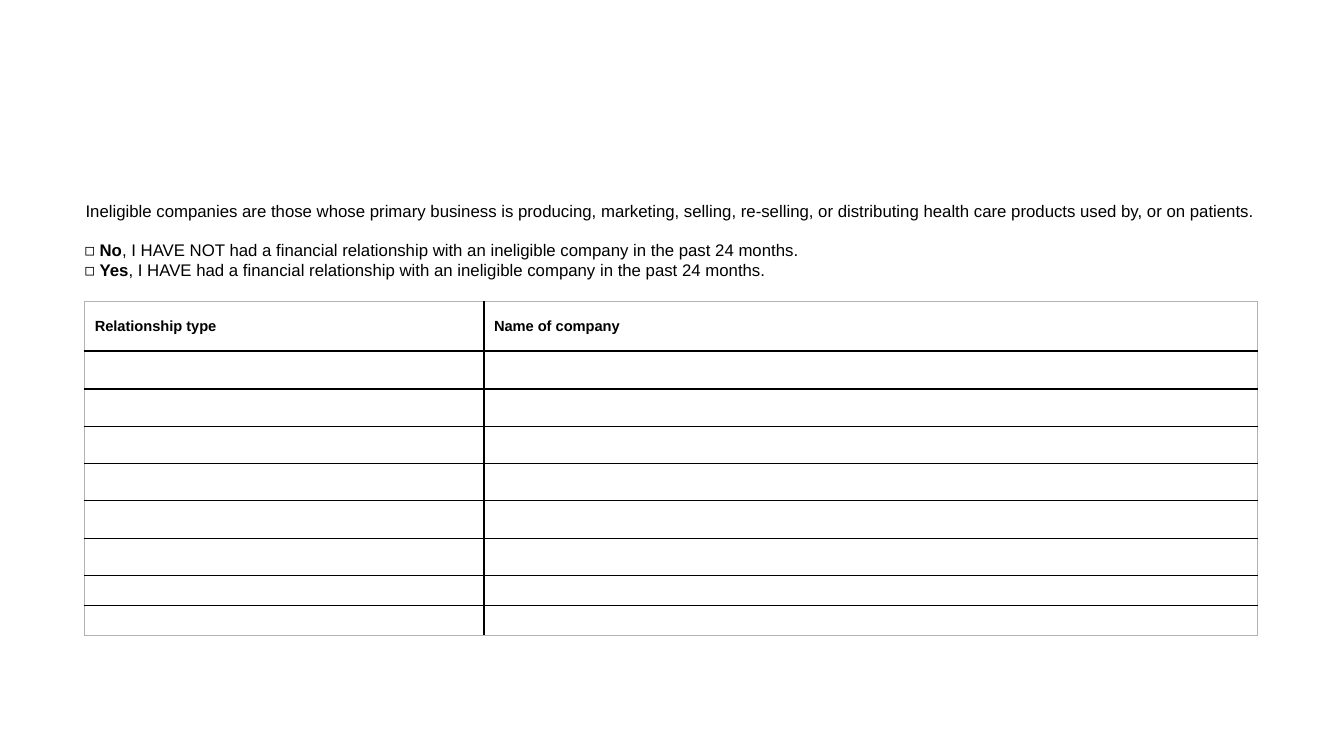
from dataclasses import dataclass

from lxml.etree import SubElement
from pptx import Presentation
from pptx.dml.color import RGBColor
from pptx.enum.text import MSO_ANCHOR, MSO_AUTO_SIZE
from pptx.oxml.ns import qn
from pptx.util import Inches, Pt


@dataclass(frozen=True)
class Theme:
    font: str = "Arial"
    ink: str = "000000"
    paper: str = "FFFFFF"
    frame: str = "B2B2B2"
    body_size: float = 12
    table_size: float = 10.5
    thin: float = 1
    thick: float = 1.5


THEME = Theme()

DEFINITION = [[(
    "Ineligible companies are those whose primary business is producing, marketing, "
    "selling, re-selling, or distributing health care products used by, or on patients.",
    False,
)]]
ANSWERS = [
    [("◻︎ ", False), (answer, True),
     (f", I {verb} had a financial relationship with an ineligible company in the past 24 months.", False)]
    for answer, verb in (("No", "HAVE NOT"), ("Yes", "HAVE"))
]
HEADINGS = ["Relationship type", "Name of company"]
COLUMN_WIDTHS = [3.96, 7.67]
ROW_HEIGHTS = [0.49, 0.38] + [0.37] * 5 + [0.3] * 2


def add_run(paragraph, text, size, bold):
    run = paragraph.add_run()
    run.text = text
    run.font.name = THEME.font
    run.font.size = Pt(size)
    run.font.bold = bold
    run.font.color.rgb = RGBColor.from_string(THEME.ink)


def add_statement(slide, box, lines):
    frame = slide.shapes.add_textbox(*map(Inches, box)).text_frame
    frame.word_wrap = True
    frame.auto_size = MSO_AUTO_SIZE.SHAPE_TO_FIT_TEXT
    for index, runs in enumerate(lines):
        paragraph = frame.add_paragraph() if index else frame.paragraphs[0]
        for text, bold in runs:
            add_run(paragraph, text, THEME.body_size, bold)


def add_border(cell, side, color, width):
    line = SubElement(cell._tc.get_or_add_tcPr(), qn(f"a:{side}"), w=str(Pt(width)))
    fill = SubElement(line, qn("a:solidFill"))
    SubElement(fill, qn("a:srgbClr"), val=color)


def style_cell(cell, row, column):
    last_row, last_column = len(ROW_HEIGHTS) - 1, len(COLUMN_WIDTHS) - 1
    outer = {"lnL": column == 0, "lnR": column == last_column,
             "lnT": row == 0, "lnB": row == last_row}
    under_heading = {"lnT": row == 1, "lnB": row == 0}
    for side, is_outer in outer.items():
        add_border(cell, side, THEME.frame if is_outer else THEME.ink,
                   THEME.thick if under_heading.get(side) else THEME.thin)
    cell.fill.solid()
    cell.fill.fore_color.rgb = RGBColor.from_string(THEME.paper)
    cell.vertical_anchor = MSO_ANCHOR.MIDDLE


def add_relationship_table(slide, left, top):
    table = slide.shapes.add_table(
        len(ROW_HEIGHTS), len(COLUMN_WIDTHS), Inches(left), Inches(top),
        Inches(sum(COLUMN_WIDTHS)), Inches(sum(ROW_HEIGHTS)),
    ).table
    table.horz_banding = False
    for column, width in zip(table.columns, COLUMN_WIDTHS):
        column.width = Inches(width)
    for row_index, (row, height) in enumerate(zip(table.rows, ROW_HEIGHTS)):
        row.height = Inches(height)
        for column_index, cell in enumerate(row.cells):
            style_cell(cell, row_index, column_index)
            paragraph = cell.text_frame.paragraphs[0]
            if row_index == 0:
                add_run(paragraph, HEADINGS[column_index], THEME.table_size, True)
            else:
                SubElement(paragraph._p, qn("a:endParaRPr"), sz=str(int(THEME.table_size * 100)))


def build_disclosure_slide(presentation):
    slide = presentation.slides.add_slide(presentation.slide_layouts[6])
    add_statement(slide, (0.75, 1.94, 11.89, 0.3), DEFINITION)
    add_statement(slide, (0.74, 2.33, 10.92, 0.5), ANSWERS)
    add_relationship_table(slide, 0.84, 2.99)


def main():
    presentation = Presentation()
    presentation.slide_width = Inches(13.33)
    presentation.slide_height = Inches(7.5)
    build_disclosure_slide(presentation)
    presentation.save("out.pptx")


if __name__ == "__main__":
    main()
